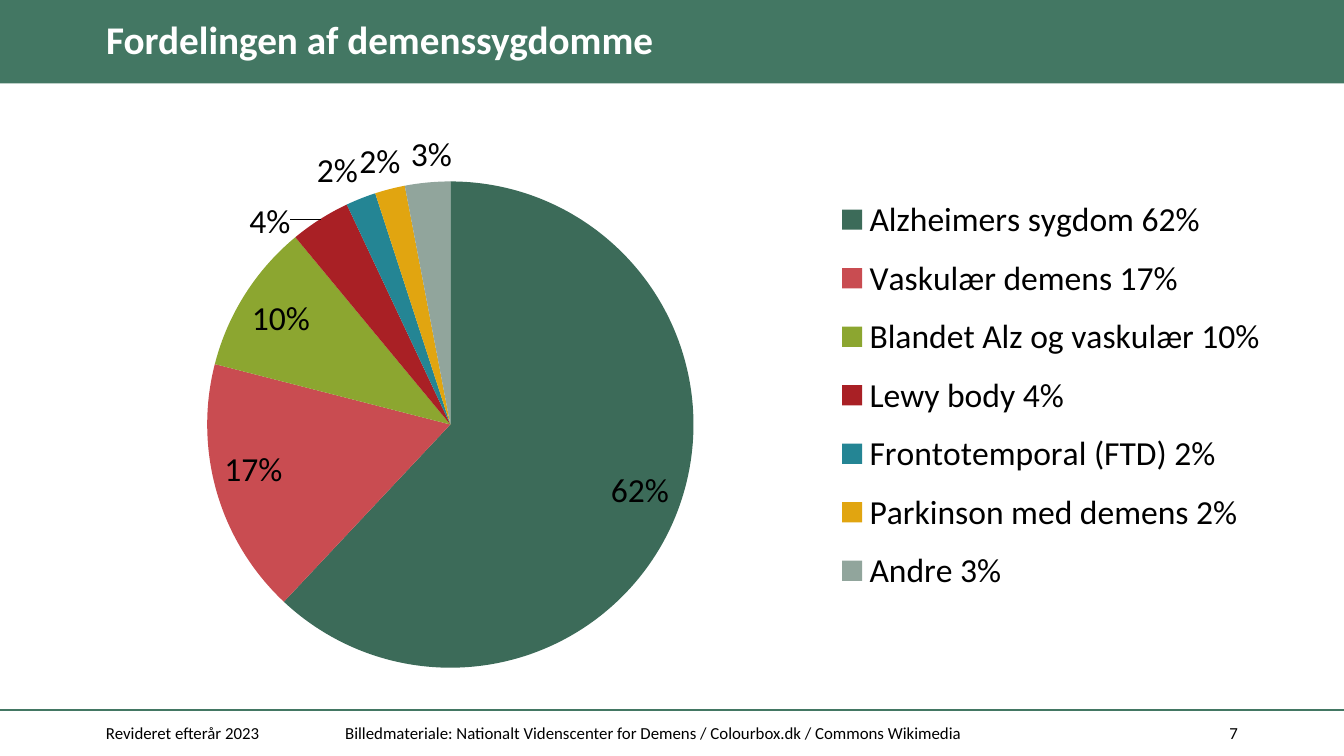
from lxml import etree
from pptx import Presentation
from pptx.chart.data import CategoryChartData
from pptx.dml.color import RGBColor
from pptx.enum.chart import XL_CHART_TYPE, XL_LABEL_POSITION, XL_LEGEND_POSITION
from pptx.enum.shapes import MSO_CONNECTOR, MSO_SHAPE
from pptx.enum.text import MSO_ANCHOR, PP_ALIGN
from pptx.oxml import parse_xml
from pptx.oxml.ns import nsdecls, qn
from pptx.util import Inches, Pt

GREEN = RGBColor(0x43, 0x77, 0x63)
WHITE = RGBColor(0xFF, 0xFF, 0xFF)
BLACK = RGBColor(0, 0, 0)
INSIDE = XL_LABEL_POSITION.INSIDE_END
OUTSIDE = XL_LABEL_POSITION.OUTSIDE_END
SLICES = [
    ("Alzheimers sygdom 62%", 0.62, RGBColor(0x3C, 0x6B, 0x59), INSIDE, None),
    ("Vaskulær demens 17%", 0.17, RGBColor(0xC9, 0x4C, 0x51), INSIDE, None),
    ("Blandet Alz og vaskulær 10%", 0.10, RGBColor(0x8C, 0xA6, 0x30), INSIDE, None),
    ("Lewy body 4%", 0.04, RGBColor(0xA9, 0x20, 0x25), OUTSIDE, (-0.02, 0.05)),
    ("Frontotemporal (FTD) 2%", 0.02, RGBColor(0x24, 0x85, 0x94), OUTSIDE, None),
    ("Parkinson med demens 2%", 0.02, RGBColor(0xE1, 0xA5, 0x10), OUTSIDE, (0.01, 0)),
    ("Andre 3%", 0.03, RGBColor(0x91, 0xA5, 0x9C), OUTSIDE, (0.02, 0)),
]
FOOTERS = [
    (0.69, 1.68, "Revideret efterår 2023", PP_ALIGN.LEFT),
    (2.47, 6.3, "Billedmateriale: Nationalt Videnscenter for Demens / Colourbox.dk / Commons Wikimedia", PP_ALIGN.LEFT),
    (8.85, 0.46, "7", PP_ALIGN.RIGHT),
]


def set_text(shape, text, color, **font_values):
    frame = shape.text_frame
    frame.text = text
    frame.word_wrap = True
    frame.vertical_anchor = MSO_ANCHOR.MIDDLE
    font = frame.paragraphs[0].runs[0].font
    font.color.rgb = color
    for name, value in {"name": "Calibri", **font_values}.items():
        setattr(font, name, value)
    return frame


def manual_layout(**values):
    parts = "".join(f'<c:{name} val="{value}"/>' for name, value in values.items())
    return parse_xml(f'<c:layout {nsdecls("c")}><c:manualLayout>{parts}</c:manualLayout></c:layout>')


presentation = Presentation()
presentation.slide_width = Inches(10)
presentation.slide_height = Inches(10) * 9 // 16
slide = presentation.slides.add_slide(presentation.slide_layouts[5])
shapes = slide.shapes

band = shapes.add_shape(MSO_SHAPE.RECTANGLE, 0, 0, presentation.slide_width, Inches(0.62))
band.shadow.inherit = False
band.fill.solid()
band.fill.fore_color.rgb = GREEN
band.line.fill.background()

rule = shapes.add_connector(MSO_CONNECTOR.STRAIGHT, 0, Inches(5.28), presentation.slide_width, Inches(5.28))
rule.line.color.rgb = GREEN
rule.line.width = Pt(1)
etree.SubElement(rule._element.spPr, qn("a:effectLst"))

title = shapes.title
for name, value in {"left": 0.69, "top": 0.11, "width": 7.44, "height": 0.44}.items():
    setattr(title, name, Inches(value))
title_frame = set_text(title, "Fordelingen af demenssygdomme", WHITE, size=Pt(21), bold=True)
for side, margin in {"left": 0.1, "top": 0, "right": 0, "bottom": 0.04}.items():
    setattr(title_frame, f"margin_{side}", Inches(margin))
title_frame.paragraphs[0].alignment = PP_ALIGN.LEFT
title_frame.paragraphs[0].line_spacing = 0.9
shapes._spTree.append(title._element)

for left, width, text, alignment in FOOTERS:
    footer = shapes.add_textbox(Inches(left), Inches(5.3), Inches(width), Inches(0.3))
    footer_frame = set_text(footer, text, BLACK, size=Pt(9))
    footer_frame.paragraphs[0].alignment = alignment

chart_data = CategoryChartData(number_format="0%")
chart_data.categories = [row[0] for row in SLICES]
chart_data.add_series("Series 1", [row[1] for row in SLICES])
chart = shapes.add_chart(
    XL_CHART_TYPE.PIE, Inches(0.34), Inches(0.74), Inches(9.41), Inches(4.36), chart_data
).chart
chart.has_title = False
for name, value in {"name": "Calibri", "size": Pt(18)}.items():
    setattr(chart.font, name, value)
chart.font.color.rgb = BLACK

chart.has_legend = True
chart.legend.position = XL_LEGEND_POSITION.RIGHT
chart.legend.include_in_layout = False
edges = {"xMode": "edge", "yMode": "edge"}
legend_layout = manual_layout(**edges, x=0.61, y=0.14, w=0.37, h=0.73)
chart.legend._element.find(qn("c:legendPos")).addnext(legend_layout)

plot_area = chart._chartSpace.chart.plotArea
for old_layout in plot_area.findall(qn("c:layout")):
    plot_area.remove(old_layout)
plot_area.insert(0, manual_layout(layoutTarget="inner", **edges, x=0.05, y=0.14, w=0.54, h=0.83))

plot = chart.plots[0]
plot.vary_by_categories = True
series = plot.series[0]
labels = series.data_labels
labels.show_value = True
labels.number_format = "0%"
labels.number_format_is_linked = False
for index, (name, share, color, position, shift) in enumerate(SLICES):
    point = series.points[index]
    point.format.fill.solid()
    point.format.fill.fore_color.rgb = color
    point.data_label.position = position
    if shift:
        label = labels._element.findall(qn("c:dLbl"))[index]
        label.find(qn("c:idx")).addnext(manual_layout(x=shift[0], y=shift[1]))

presentation.save("out.pptx")
